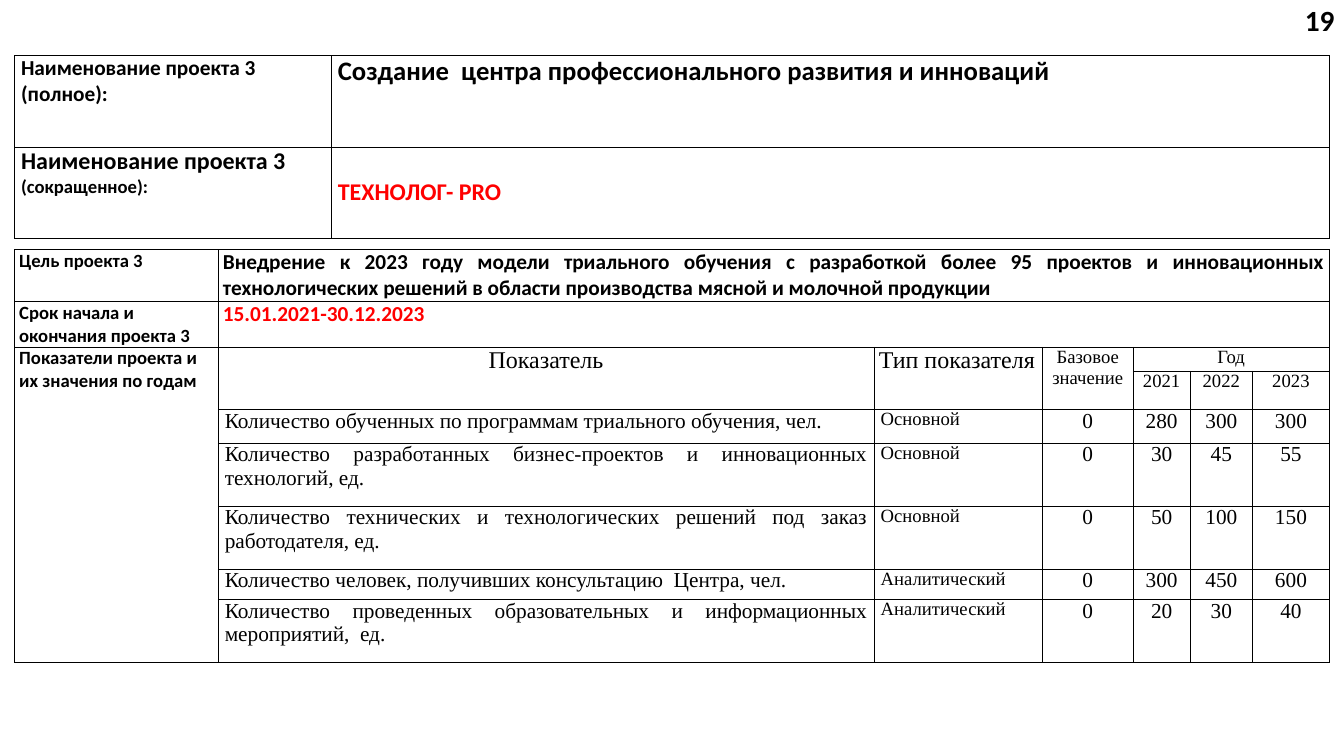
from dataclasses import dataclass

from lxml import etree
from pptx import Presentation
from pptx.dml.color import RGBColor
from pptx.enum.text import MSO_ANCHOR, PP_ALIGN
from pptx.oxml.ns import qn
from pptx.util import Pt

LEFT, CENTER = PP_ALIGN.LEFT, PP_ALIGN.CENTER
RIGHT, JUSTIFY = PP_ALIGN.RIGHT, PP_ALIGN.JUSTIFY
TOP, MIDDLE = MSO_ANCHOR.TOP, MSO_ANCHOR.MIDDLE


@dataclass(frozen=True)
class Theme:
    heading_font: str = "Calibri"
    body_font: str = "Times New Roman"
    ink: str = "000000"
    accent: str = "FF0000"
    small: int = 14
    medium: int = 16
    large: int = 18
    title: int = 20
    page_number: int = 22
    border: float = 0.25
    narrow_margin: float = 3.6
    wide_margin: float = 5


THEME = Theme()

INDICATORS = [
    ("Количество обученных по программам триального обучения, чел.",
     "Основной", 0, 280, 300, 300),
    ("Количество разработанных бизнес-проектов и инновационных технологий, ед.",
     "Основной", 0, 30, 45, 55),
    ("Количество технических и технологических решений под заказ работодателя, ед.",
     "Основной", 0, 50, 100, 150),
    ("Количество человек, получивших консультацию  Центра, чел.",
     "Аналитический", 0, 300, 450, 600),
    ("Количество проведенных образовательных и информационных мероприятий,  ед.",
     "Аналитический", 0, 20, 30, 40),
]


def style_font(font, size, color=THEME.ink, heading=True):
    font.name = THEME.heading_font if heading else THEME.body_font
    font.bold = heading
    font.size = Pt(size)
    font.color.rgb = RGBColor.from_string(color)


def draw_borders(cell):
    properties = cell._tc.get_or_add_tcPr()
    for position, side in enumerate(("a:lnL", "a:lnR", "a:lnT", "a:lnB")):
        line = etree.Element(qn(side), w=str(Pt(THEME.border)))
        fill = etree.SubElement(line, qn("a:solidFill"))
        etree.SubElement(fill, qn("a:srgbClr"), val=THEME.ink)
        properties.insert(position, line)


def add_grid(slide, box, widths, heights, margin):
    """Add an unfilled table with thin borders on every cell."""
    frame = slide.shapes.add_table(len(heights), len(widths), *map(Pt, box))
    table = frame.table
    table.first_row = table.horz_banding = False
    for column, width in zip(table.columns, widths):
        column.width = Pt(width)
    for row, height in zip(table.rows, heights):
        row.height = Pt(height)
    for cell in table.iter_cells():
        cell.margin_left = cell.margin_right = Pt(margin)
        cell.margin_top = cell.margin_bottom = 0
        cell.fill.background()
        draw_borders(cell)
        cell.text_frame.paragraphs[0].font.size = Pt(THEME.small)
    return table


def write(cell, text, size, align=LEFT, color=THEME.ink, heading=True):
    paragraph = cell.text_frame.paragraphs[0]
    paragraph.text = str(text)
    paragraph.alignment = align
    style_font(paragraph.font, size, color, heading)


def add_page_number(slide, box, number):
    text_box = slide.shapes.add_textbox(*map(Pt, box))
    frame = text_box.text_frame
    frame.word_wrap = True
    frame.vertical_anchor = MIDDLE
    paragraph = frame.paragraphs[0]
    paragraph.text = number
    paragraph.alignment = RIGHT
    style_font(paragraph.font, THEME.page_number)


def add_names_table(slide, box):
    label_width = 237.6
    widths = [label_width, box[2] - label_width]
    table = add_grid(slide, box, widths, [box[3] / 2] * 2, THEME.wide_margin)
    write(table.cell(0, 0), "Наименование проекта 3 (полное):", THEME.medium)
    write(table.cell(0, 1),
          "Создание  центра профессионального развития и инноваций", THEME.title)

    # Short name: the label's second run is smaller
    label = table.cell(1, 0)
    write(label, "Наименование проекта 3 ", THEME.large)
    run = label.text_frame.paragraphs[0].add_run()
    run.text = "(сокращенное):"
    run.font.size = Pt(THEME.small)
    write(table.cell(1, 1), "ТЕХНОЛОГ- PRO", THEME.large, color=THEME.accent)
    table.cell(1, 1).vertical_anchor = MIDDLE


def add_indicators_table(slide, box):
    widths = [152.8, 491.9, 126.4, 67.9, 43, 46.6, 57.8]
    heights = [38.4, 32.6, 18, 28.6, 25.4, 47.3, 47.3, 22.6, 47.3]
    table = add_grid(slide, box, widths, heights, THEME.narrow_margin)
    cell = table.cell

    # Merged areas: wide values, row label, two-row headings, years
    merges = [((0, 1), (0, 6)), ((1, 1), (1, 6)), ((2, 0), (8, 0)), ((2, 4), (2, 6))]
    merges += [((2, column), (3, column)) for column in (1, 2, 3)]
    for first, last in merges:
        cell(*first).merge(cell(*last))

    # Goal, dates and label of the indicators
    labels = ["Цель проекта 3", "Срок начала и окончания проекта 3",
              "Показатели проекта и их значения по годам"]
    for row, label in enumerate(labels):
        write(cell(row, 0), label, THEME.small)
    write(cell(0, 1),
          "Внедрение к 2023 году модели триального обучения с разработкой более "
          "95 проектов и инновационных технологических решений в области "
          "производства мясной и молочной продукции", THEME.medium, JUSTIFY)
    write(cell(1, 1), "15.01.2021-30.12.2023", THEME.medium, JUSTIFY, THEME.accent)

    # Column headings
    write(cell(2, 1), "Показатель", THEME.large, CENTER, heading=False)
    write(cell(2, 2), "Тип показателя", THEME.large, heading=False)
    write(cell(2, 3), "Базовое значение", THEME.small, CENTER, heading=False)
    write(cell(2, 4), "Год", THEME.small, CENTER, heading=False)
    for column, year in enumerate((2021, 2022, 2023), 4):
        write(cell(3, column), year, THEME.small, CENTER, heading=False)

    # Indicator rows
    for row, values in enumerate(INDICATORS, 4):
        for column, value in enumerate(values, 1):
            size = THEME.small if column == 2 else THEME.medium
            align = {1: JUSTIFY, 2: LEFT}.get(column, CENTER)
            target = cell(row, column)
            write(target, value, size, align, heading=False)
            target.margin_left = target.margin_right = Pt(THEME.wide_margin)


def main():
    presentation = Presentation()
    presentation.slide_width, presentation.slide_height = Pt(1008), Pt(567.36)
    slide = presentation.slides.add_slide(presentation.slide_layouts[6])
    left, width = 10.8, 986.4
    add_names_table(slide, (left, 41.5, width, 137.2))
    add_indicators_table(slide, (left, 187.2, width, 308))
    add_page_number(slide, (772.6, 0, 235.4, 30.2), "19")
    presentation.save("out.pptx")


if __name__ == "__main__":
    main()
